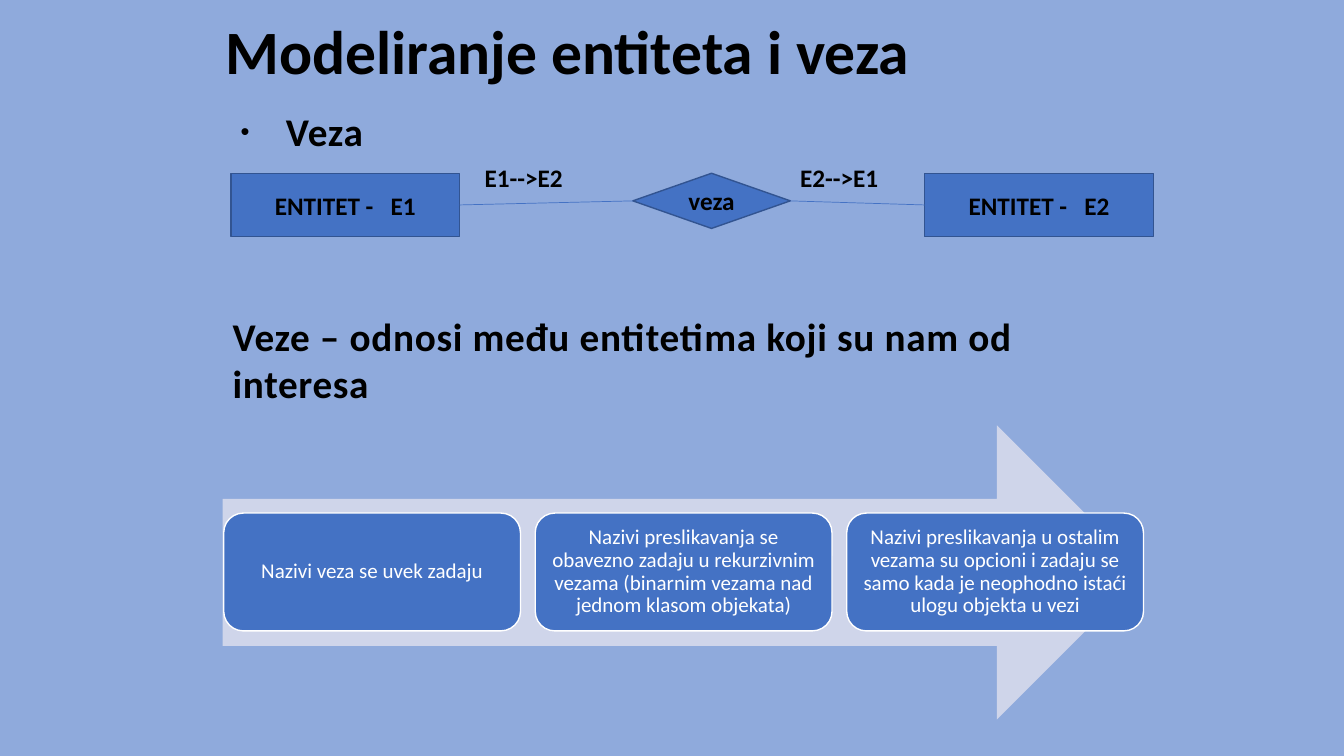
"""Build the slide on modelling entities and relationships."""
import pptx
import pptx.dml.color
import pptx.enum.shapes
import pptx.enum.text
import pptx.oxml
import pptx.oxml.ns
import pptx.util

Pt = pptx.util.Pt
RGBColor = pptx.dml.color.RGBColor
Kind = pptx.enum.shapes.MSO_SHAPE
Align = pptx.enum.text.PP_ALIGN
Anchor = pptx.enum.text.MSO_ANCHOR

BACK = RGBColor(0x8F, 0xAA, 0xDC)
BLUE = RGBColor(0x44, 0x72, 0xC4)
EDGE = RGBColor(0x32, 0x54, 0x91)
PALE = RGBColor(0xCF, 0xD5, 0xEA)
BLACK = RGBColor(0, 0, 0)
WHITE = RGBColor(0xFF, 0xFF, 0xFF)


def write(para, text, size, color=BLACK, bold=True, gap=0):
    run = para.add_run()
    run.text = text
    run.font.name = "Calibri"
    run.font.size = Pt(size)
    run.font.bold = bold
    run.font.color.rgb = color
    if gap:
        run._r.get_or_add_rPr().set("spc", str(gap))


def draw(kind, box, fill, edge=None):
    shape = slide.shapes.add_shape(kind, *map(Pt, box))
    shape.shadow.inherit = False
    shape.fill.solid()
    shape.fill.fore_color.rgb = fill
    if edge is None:
        shape.line.fill.background()
    else:
        shape.line.color.rgb = edge
        shape.line.width = Pt(1)
    frame = shape.text_frame
    frame.word_wrap = True
    frame.vertical_anchor = Anchor.MIDDLE
    frame.paragraphs[0].alignment = Align.CENTER
    return shape


deck = pptx.Presentation()
deck.slide_width = Pt(960)
deck.slide_height = Pt(540)
slide = deck.slides.add_slide(deck.slide_layouts[5])
slide.background.fill.solid()
slide.background.fill.fore_color.rgb = BACK

title = slide.shapes.title
title.left, title.top, title.width, title.height = map(Pt, (154, 0, 648, 78.5))
title.text_frame.vertical_anchor = Anchor.MIDDLE
para = title.text_frame.paragraphs[0]
para.alignment = Align.LEFT
para.line_spacing = 0.9
write(para, "Modeliranje entiteta i veza", 44)

ends = []
for name, left in (("E1", 164.9), ("E2", 660.4)):
    rect = draw(Kind.RECTANGLE, (left, 123.8, 163.5, 45.2), BLUE, EDGE)
    para = rect.text_frame.paragraphs[0]
    write(para, "ENTITET -", 18)
    write(para, " ", 18, gap=810)
    write(para, name, 18)
    ends.append(rect)

link = draw(Kind.DIAMOND, (452, 123.8, 112.5, 39.4), BLUE, EDGE)
write(link.text_frame.paragraphs[0], "veza", 18)

for start, stop in ((ends[0], link), (link, ends[1])):
    line = slide.shapes.add_connector(
        pptx.enum.shapes.MSO_CONNECTOR.STRAIGHT, 0, 0, 0, 0)
    line.begin_connect(start, 3)
    line.end_connect(stop, 1)
    line.line.color.rgb = BLUE
    line.line.width = Pt(0.5)
    line._element.spPr.append(pptx.oxml.parse_xml(
        f"<a:effectLst {pptx.oxml.ns.nsdecls('a')}/>"))

labels = (
    ("Veza", (154, 73.4, 129.6, 42.5), 28, 50),
    ("Veze – odnosi među entitetima koji su nam od interesa",
     (159.1, 219.6, 663.8, 74.9), 28, 50),
    ("E1-->E2", (339.1, 112.3, 95.8, 28.8), 18, 0),
    ("E2-->E1", (564.5, 112.3, 90, 28.8), 18, 0),
)
paras = []
for text, box, size, gap in labels:
    frame = slide.shapes.add_textbox(*map(Pt, box)).text_frame
    frame.word_wrap = True
    paras.append(frame.paragraphs[0])
    write(paras[-1], text, size, gap=gap)

paras[0].space_before = Pt(5.6)
props = paras[0]._p.get_or_add_pPr()
props.set("marL", str(Pt(43.2)))
props.set("indent", str(Pt(-32.4)))
for mark in ('buClr><a:srgbClr val="000000"/></a:buClr',
             'buSzPct val="65000"/',
             'buFont typeface="Arial"/',
             'buChar char="•"/'):
    head, rest = mark[:5], mark
    tag = rest.split(">")[0].split(" ")[0]
    xml = rest.replace(tag, f"{tag} {pptx.oxml.ns.nsdecls('a')}", 1)
    props.append(pptx.oxml.parse_xml(f"<a:{xml}>"))

draw(Kind.RIGHT_ARROW, (159.1, 303.8, 658.1, 210.2), PALE)
notes = (
    "Nazivi veza se uvek zadaju",
    "Nazivi preslikavanja se obavezno zadaju u rekurzivnim vezama "
    "(binarnim vezama nad jednom klasom objekata)",
    "Nazivi preslikavanja u ostalim vezama su opcioni i zadaju se samo "
    "kada je neophodno istaći ulogu objekta u vezi",
)
for i, text in enumerate(notes):
    card = draw(Kind.ROUNDED_RECTANGLE,
                (159.8 + 222.5 * i, 366.5, 212, 84.2), BLUE, WHITE)
    frame = card.text_frame
    frame.margin_left = frame.margin_right = Pt(4.5)
    frame.margin_top = frame.margin_bottom = Pt(4.5)
    para = frame.paragraphs[0]
    para.line_spacing = 0.9
    write(para, text, 15, WHITE, bold=False)

deck.save("out.pptx")
